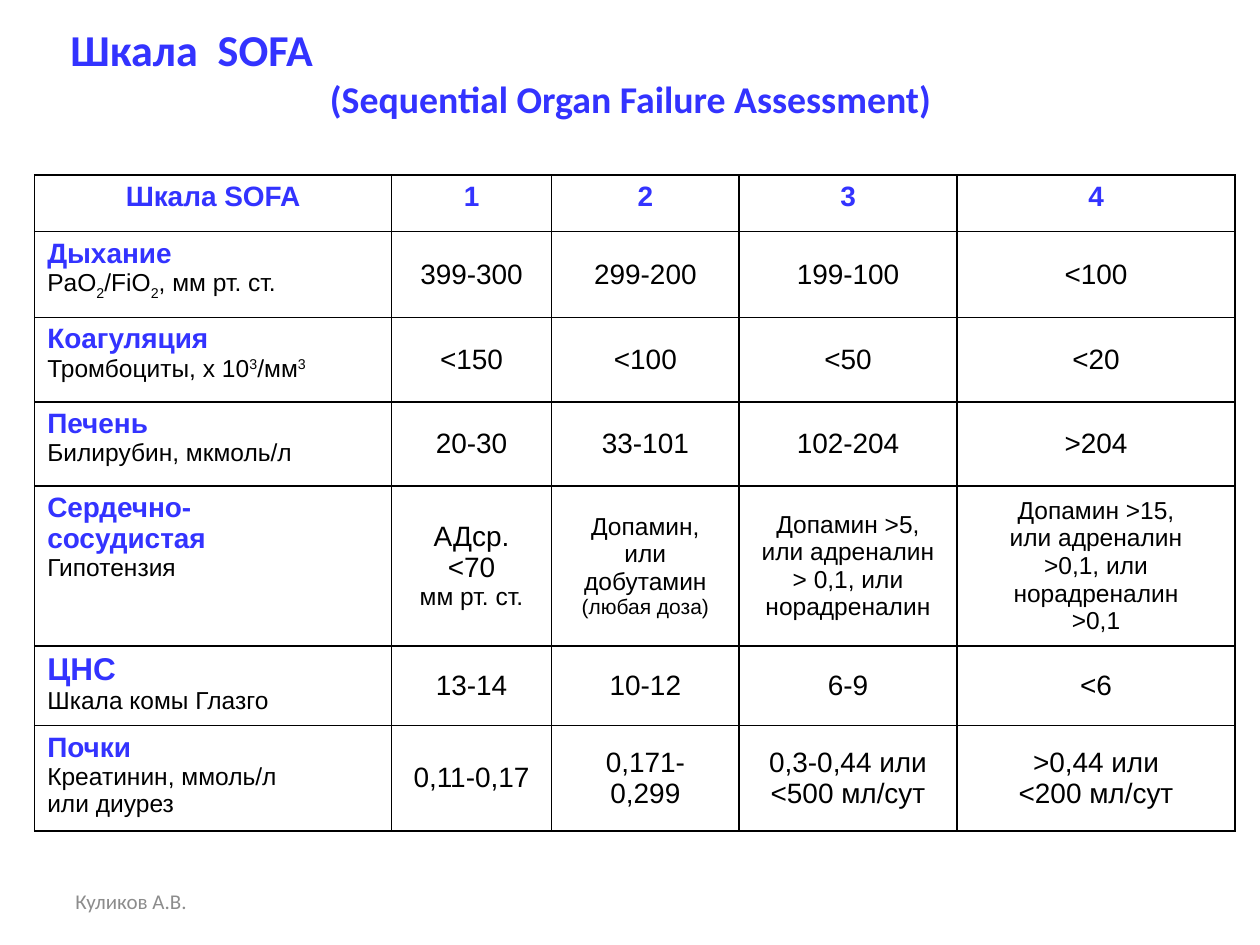
from lxml.etree import SubElement
from pptx import Presentation
from pptx.dml.color import RGBColor
from pptx.enum.text import MSO_ANCHOR as Anchor, PP_ALIGN as Align
from pptx.oxml.ns import qn
from pptx.util import Cm, Pt

BLUE, BLACK, GRAY = "3333FF", "000000", "8C8C8C"
COLUMN_WIDTHS = [7.19, 3.23, 3.78, 4.39, 5.61]
ROW_HEIGHTS = [1.14, 1.73, 1.7, 1.7, 3.1, 1.45, 1.7]
HEADER = ["Шкала SOFA", "1", "2", "3", "4"]
ORGANS = [
    (["Дыхание"], 16, [[("PaO", 0), ("2", -30), ("/FiO", 0), ("2", -30), (", мм рт. ст.", 0)]]),
    (["Коагуляция"], 16, [[("Тромбоциты, х 10", 0), ("3", 30), ("/мм", 0), ("3", 30)]]),
    (["Печень"], 16, [[("Билирубин, мкмоль/л", 0)]]),
    (["Сердечно-", "сосудистая"], 16, [[("Гипотензия", 0)]]),
    (["ЦНС"], 18, [[("Шкала комы Глазго", 0)]]),
    (["Почки"], 16, [[("Креатинин, ммоль/л", 0)], [("или диурез", 0)]]),
]
SCORES = [
    ["399-300", "299-200", "199-100", "<100"],
    ["<150", "<100", "<50", "<20"],
    ["20-30", "33-101", "102-204", ">204"],
    [
        [("АДср.", 16), ("<70", 16), ("мм рт. ст.", 14)],
        [("Допамин,", 14), ("или", 14), ("добутамин", 14), ("(любая доза)", 12)],
        [("Допамин >5,", 14), ("или адреналин", 14), ("> 0,1, или", 14), ("норадреналин", 14)],
        [("Допамин >15,", 14), ("или адреналин", 14), (">0,1, или", 14),
         ("норадреналин", 14), (">0,1", 14)],
    ],
    ["13-14", "10-12", "6-9", "<6"],
    ["0,11-0,17", [("0,171-", 16), ("0,299", 16)],
     [("0,3-0,44 или", 16), ("<500 мл/сут", 16)],
     [(">0,44 или", 16), ("<200 мл/сут", 16)]],
]


def color(value):
    return RGBColor.from_string(value)


def next_paragraph(frame, align):
    first = frame.paragraphs[0]
    paragraph = frame.add_paragraph() if first.runs else first
    paragraph.alignment = align
    return paragraph


def add_run(paragraph, text, size=16, fill=BLACK, bold=False, font="Arial", baseline=0):
    run = paragraph.add_run()
    run.text = text
    run.font.size, run.font.bold, run.font.name = Pt(size), bold, font
    run.font.color.rgb = color(fill)
    if baseline:
        run._r.get_or_add_rPr().set("baseline", str(baseline * 1000))


def add_text_frame(slide, left, top, width, height):
    frame = slide.shapes.add_textbox(Cm(left), Cm(top), Cm(width), Cm(height)).text_frame
    frame.word_wrap = True
    frame.vertical_anchor = Anchor.MIDDLE
    return frame


def add_title(slide):
    frame = add_text_frame(slide, 0.51, 0.76, 24.41, 1.37)
    name = next_paragraph(frame, Align.LEFT)
    name._p.get_or_add_pPr().set("marL", str(Cm(0.66)))
    add_run(name, "Шкала  SOFA", size=25.2, fill=BLUE, bold=True, font="Calibri")
    add_run(next_paragraph(frame, Align.CENTER), "(Sequential Organ Failure Assessment)",
            size=21.6, fill=BLUE, bold=True, font="Calibri")


def add_footer(slide):
    frame = add_text_frame(slide, 1.27, 17.65, 5.92, 1.02)
    add_run(next_paragraph(frame, Align.LEFT), "Куликов А.В.", size=12, fill=GRAY, font="Calibri")


def format_cell(cell, anchor):
    """Give the cell thin black borders, no fill and its vertical anchor."""
    properties = cell._tc.get_or_add_tcPr()
    for side in ("a:lnL", "a:lnR", "a:lnT", "a:lnB"):
        line = SubElement(properties, qn(side), w=str(Pt(1)))
        SubElement(SubElement(line, qn("a:solidFill")), qn("a:srgbClr"), val=BLACK)
    cell.fill.background()
    cell.vertical_anchor = anchor


def fill_header(cell, text):
    format_cell(cell, Anchor.TOP)
    add_run(next_paragraph(cell.text_frame, Align.CENTER), text, fill=BLUE, bold=True)


def fill_organ(cell, headings, size, details):
    format_cell(cell, Anchor.TOP)
    for heading in headings:
        add_run(next_paragraph(cell.text_frame, Align.LEFT), heading,
                size=size, fill=BLUE, bold=True)
    for detail in details:
        paragraph = next_paragraph(cell.text_frame, Align.LEFT)
        for text, baseline in detail:
            add_run(paragraph, text, size=14, baseline=baseline)


def fill_score(cell, score):
    format_cell(cell, Anchor.MIDDLE)
    lines = [(score, 16)] if isinstance(score, str) else score
    for text, size in lines:
        add_run(next_paragraph(cell.text_frame, Align.CENTER), text, size=size)


def add_score_table(slide):
    table = slide.shapes.add_table(
        len(ROW_HEIGHTS), len(COLUMN_WIDTHS), Cm(0.7), Cm(3.53),
        Cm(sum(COLUMN_WIDTHS)), Cm(sum(ROW_HEIGHTS))).table
    for column, width in zip(table.columns, COLUMN_WIDTHS):
        column.width = Cm(width)
    for row, height in zip(table.rows, ROW_HEIGHTS):
        row.height = Cm(height)
    for index, text in enumerate(HEADER):
        fill_header(table.cell(0, index), text)
    for row, (organ, scores) in enumerate(zip(ORGANS, SCORES), start=1):
        fill_organ(table.cell(row, 0), *organ)
        for column, score in enumerate(scores, start=1):
            fill_score(table.cell(row, column), score)


def main():
    presentation = Presentation()
    presentation.slide_width, presentation.slide_height = Cm(25.4), Cm(19.05)
    slide = presentation.slides.add_slide(presentation.slide_layouts[6])
    add_footer(slide)
    add_title(slide)
    add_score_table(slide)
    presentation.save("out.pptx")


if __name__ == "__main__":
    main()
